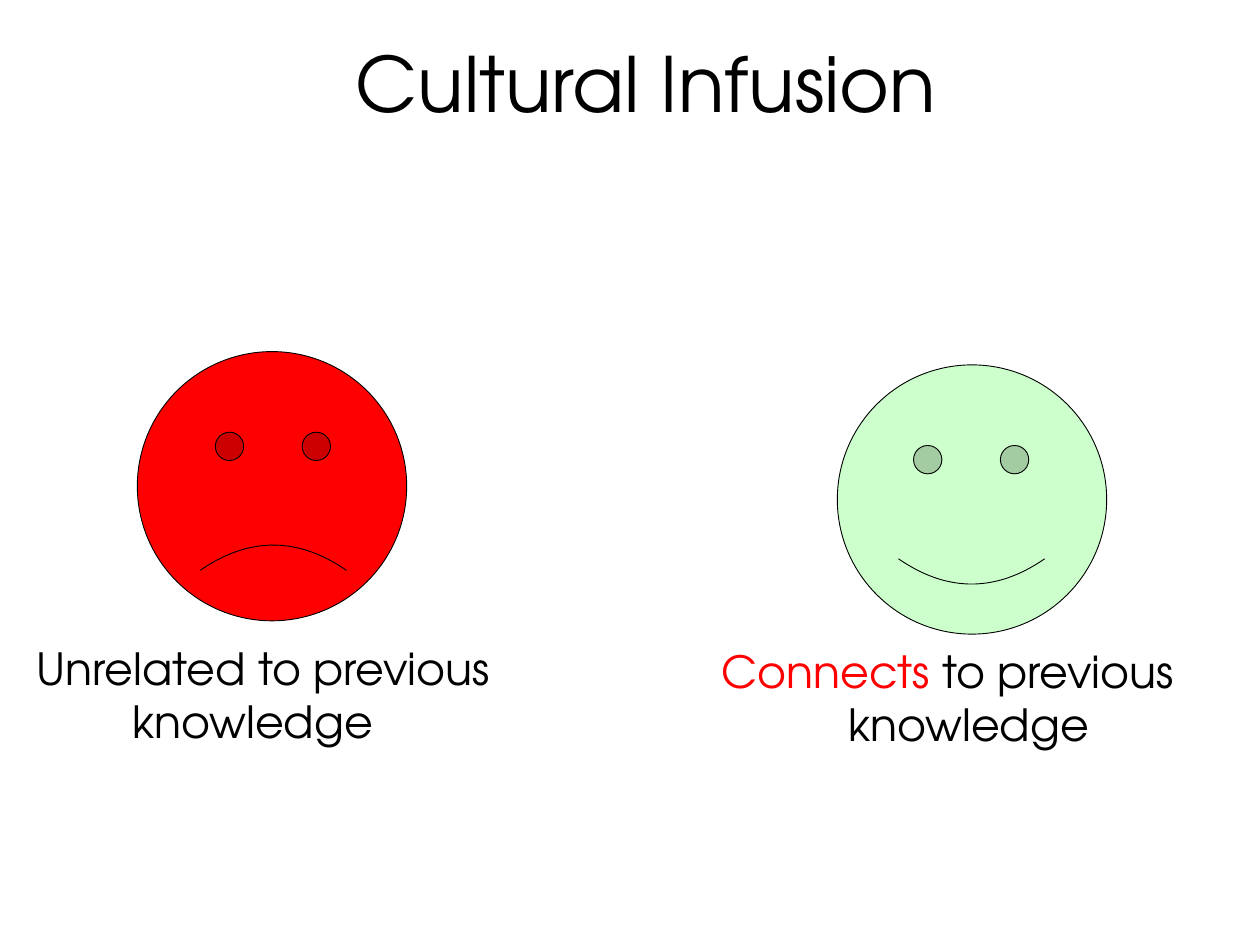
"""Build the Cultural Infusion slide with a frowning and a smiling face."""
import pptx
import pptx.dml.color
import pptx.enum.shapes
import pptx.enum.text
import pptx.util

Inches = pptx.util.Inches
Pt = pptx.util.Pt


def colour(value):
    return pptx.dml.color.RGBColor.from_string(value)


class SlideBuilder:
    font = "TeX Gyre Adventor"
    ink = "000000"
    face_size = 3.04
    eye_size = 0.32
    eye_gap = 0.98
    mouth_width = 1.65
    mouth_steps = 40

    def __init__(self, page):
        self.page = page

    def text(self, left, top, width, height, spans, size, margin=0, indent=0):
        box = self.page.shapes.add_textbox(
            Inches(left), Inches(top), Inches(width), Inches(height))
        frame = box.text_frame
        frame.word_wrap = True
        frame.vertical_anchor = pptx.enum.text.MSO_ANCHOR.TOP
        frame.margin_left = frame.margin_right = 0
        frame.margin_top = frame.margin_bottom = 0
        para = frame.paragraphs[0]
        para.alignment = pptx.enum.text.PP_ALIGN.CENTER
        properties = para._p.get_or_add_pPr()
        properties.set("marL", str(Inches(margin)))
        properties.set("indent", str(Inches(indent)))
        para.font.name = self.font
        para.font.size = Pt(size)
        para.font.color.rgb = colour(self.ink)
        for words, shade in spans:
            span = para.add_run()
            span.text = words
            if shade != self.ink:
                span.font.color.rgb = colour(shade)
        return frame

    def title(self, left, top, width, height, words):
        frame = self.text(left, top, width, height, [(words, self.ink)], 62, indent=0.07)
        frame.vertical_anchor = pptx.enum.text.MSO_ANCHOR.MIDDLE

    def outline(self, shape):
        shape.shadow.inherit = False
        shape.line.color.rgb = colour(self.ink)
        shape.line.width = Pt(0.75)

    def circle(self, group, left, top, size, fill):
        circle = group.shapes.add_shape(
            pptx.enum.shapes.MSO_SHAPE.OVAL, Inches(left), Inches(top),
            Inches(size), Inches(size))
        circle.fill.solid()
        circle.fill.fore_color.rgb = colour(fill)
        self.outline(circle)

    def mouth(self, group, left, top, bend):
        points = []
        for step in range(self.mouth_steps + 1):
            share = step / self.mouth_steps
            points.append((Inches(left + self.mouth_width * share),
                           Inches(top + 3 * bend * share * (1 - share))))
        builder = group.shapes.build_freeform(*points[0])
        builder.add_line_segments(points[1:], close=False)
        mouth = builder.convert_to_shape()
        mouth.fill.background()
        self.outline(mouth)

    def face(self, left, top, eye_left, fill, eye_fill, mood):
        group = self.page.shapes.add_group_shape()
        self.circle(group, left, top, self.face_size, fill)
        for eye in range(2):
            self.circle(group, eye_left + eye * self.eye_gap, top + 0.91,
                        self.eye_size, eye_fill)
        self.mouth(group, eye_left - 0.17, top + 2.33 - 0.14 * mood, 0.38 * mood)


def main():
    deck = pptx.Presentation()
    deck.slide_width = Inches(14.22)
    deck.slide_height = Inches(10.67)
    page = deck.slides.add_slide(deck.slide_layouts[6])
    builder = SlideBuilder(page)
    builder.title(1.22, 0.14, 12.08, 1.58, "Cultural Infusion")
    builder.text(0.1, 7.24, 5.5, 1.2,
                 [("Unrelated to previous knowledge", builder.ink)], 36, indent=0.24)
    builder.text(7.11, 7.27, 7.11, 1.2,
                 [("Connects", "FF0000"), (" to previous knowledge", builder.ink)],
                 36, margin=0.53, indent=-0.47)
    builder.face(1.55, 3.97, 2.43, "FF0000", "CC0000", -1)
    builder.face(9.45, 4.12, 10.31, "CCFFCC", "A3CCA3", 1)
    deck.save("out.pptx")


if __name__ == "__main__":
    main()
